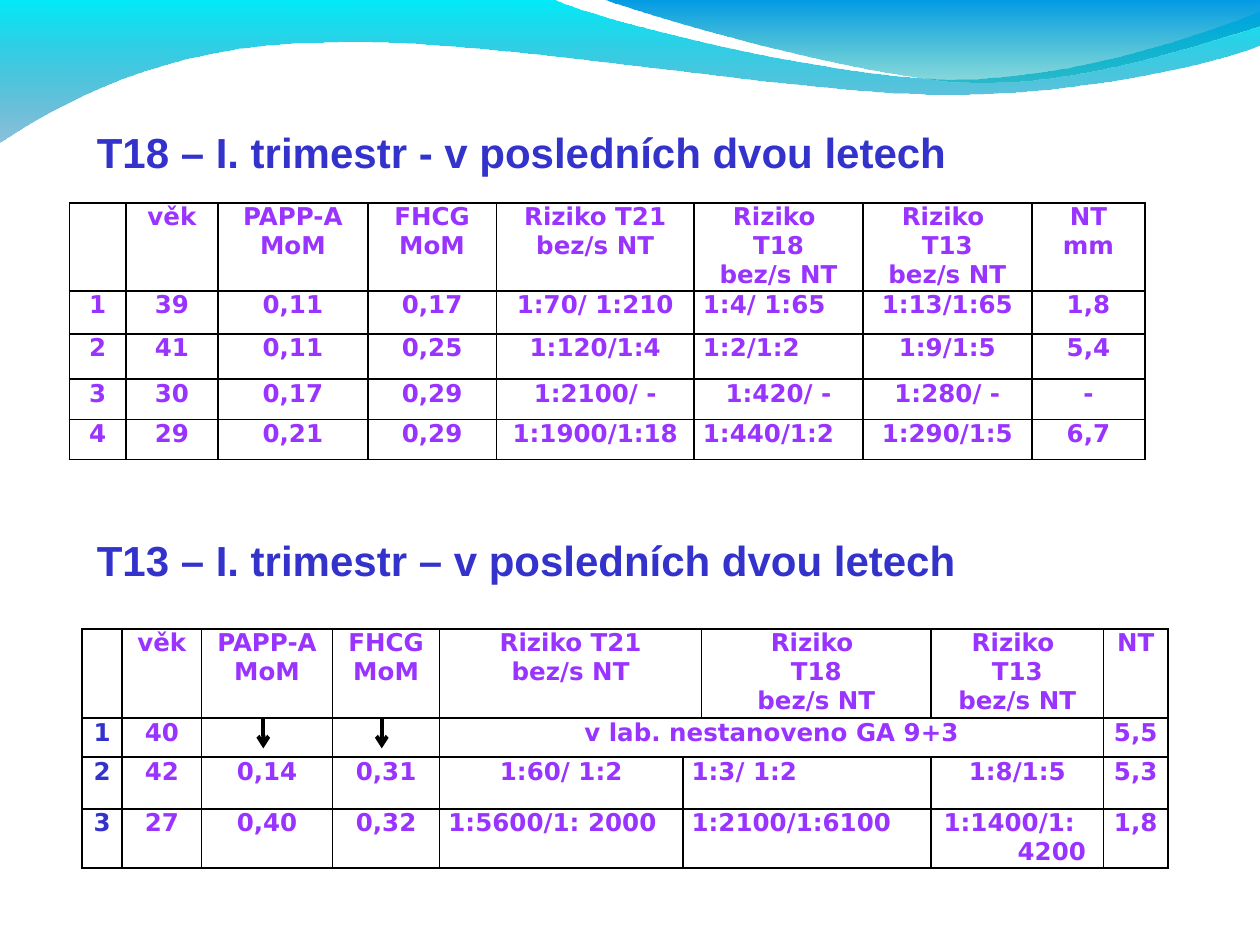
import pptx
import pptx.dml.color
import pptx.enum.shapes
import pptx.enum.text
import pptx.oxml.ns
import pptx.util
from lxml import etree

Inches = pptx.util.Inches
Pt = pptx.util.Pt
RGBColor = pptx.dml.color.RGBColor
ALIGN = pptx.enum.text.PP_ALIGN
qn = pptx.oxml.ns.qn

CYAN = RGBColor(0x00, 0xEB, 0xF8)
STEEL = RGBColor(0x00, 0x79, 0xAF)
BLUE = RGBColor(0x00, 0x9B, 0xE5)
TEAL = RGBColor(0x00, 0xAD, 0xB6)
INDIGO = RGBColor(0x33, 0x33, 0xCC)
VIOLET = RGBColor(0x99, 0x33, 0xFF)
BLACK = RGBColor(0, 0, 0)

# Waves: a start point, then line ends (one point) or curves (three points)
LARGE_WAVE = [
    [(0, 0)], [(4.4, 0)],
    [(4.76, 0.17), (6.64, 0.63), (7.58, 0.63)],
    [(8.53, 0.63), (9.58, 0.26), (10, 0.09)],
    [(10, 0.36)],
    [(9.83, 0.44), (8.7, 0.76), (7.46, 0.75)],
    [(6.22, 0.75), (3.82, 0.28), (2.57, 0.34)],
    [(1.29, 0.35), (0.46, 0.83), (0, 1.13)],
]
SMALL_WAVE = [
    [(4.79, 0)],
    [(5.09, 0.11), (6.82, 0.62), (7.69, 0.65)],
    [(8.56, 0.69), (9.61, 0.32), (10, 0.21)],
    [(10, 0)],
]

# Cell text: "|" parts paragraphs, a leading "<" or ">" aligns left or right
HEADINGS = ["", "věk", "PAPP-A|MoM", "FHCG|MoM", "Riziko T21|bez/s NT",
            "Riziko |T18|bez/s NT", "Riziko |T13|bez/s NT"]
T18_ROWS = [
    HEADINGS + ["NT|mm"],
    ["1", "39", "0,11", "0,17", "1:70/ 1:210", "<1:4/ 1:65", "1:13/1:65", "1,8"],
    ["2", "41", "0,11", "0,25", "1:120/1:4", "<1:2/1:2", "1:9/1:5", "5,4"],
    ["3", "30", "0,17", "0,29", "1:2100/ -", "1:420/ -", "1:280/ -", "-"],
    ["4", "29", "0,21", "0,29", "1:1900/1:18", "<1:440/1:2", "1:290/1:5", "6,7"],
]
T13_ROWS = [
    HEADINGS[:5] + [""] + HEADINGS[5:] + ["NT"],
    ["1", "40", "", "", "v lab. nestanoveno GA 9+3", "", "", "", "5,5"],
    ["2", "42", "0,14", "0,31", "1:60/ 1:2", "<1:3/ 1:2", "", "1:8/1:5", "5,3"],
    ["3", "27", "0,40", "0,32", "<1:5600/1: 2000", "<1:2100/1:6100", "",
     "<1:1400/1:|>4200", "1,8"],
]
T13_MERGES = [(0, 4, 5), (1, 4, 7), (2, 5, 6), (3, 5, 6)]  # row, first, last


def bend_edges(wave, segments):
    """Turn the straight edges that stand for curves into cubic curves."""
    edges = list(wave.element.iter(qn("a:lnTo")))
    for edge, segment in zip(edges, segments[1:]):
        if len(segment) == 1:
            continue
        curve = etree.Element(qn("a:cubicBezTo"))
        for x, y in segment:
            etree.SubElement(curve, qn("a:pt"), x=str(Inches(x) - wave.left),
                             y=str(Inches(y) - wave.top))
        edge.getparent().replace(edge, curve)


def add_wave(page, segments, top_color, bottom_color):
    ends = [tuple(Inches(value) for value in segment[-1]) for segment in segments]
    builder = page.shapes.build_freeform(*ends[0])
    builder.add_line_segments(ends[1:], close=True)
    wave = builder.convert_to_shape()
    bend_edges(wave, segments)
    wave.shadow.inherit = False
    wave.line.fill.background()
    wave.fill.gradient()
    wave.fill.gradient_angle = 270
    for stop, color, position in zip(wave.fill.gradient_stops,
                                     (top_color, bottom_color), (0, 1)):
        stop.color.rgb = color
        stop.position = position
    # The lower end of the gradient is see-through
    last_color = list(wave.element.iter(qn("a:srgbClr")))[-1]
    etree.SubElement(last_color, qn("a:alpha")).set("val", "45000")


def style_span(span, font, size, color):
    span.font.name = font
    span.font.size = Pt(size)
    span.font.bold = True
    span.font.color.rgb = color


def add_heading(page, left, top, width, height, text):
    box = page.shapes.add_textbox(Inches(left), Inches(top), Inches(width), Inches(height))
    box.text_frame.word_wrap = True
    para = box.text_frame.paragraphs[0]
    para.line_spacing = 0.8
    span = para.add_run()
    span.text = text
    style_span(span, "Arial", 24, INDIGO)


def add_borders(cell):
    properties = cell._tc.get_or_add_tcPr()
    for side in ("lnL", "lnR", "lnT", "lnB"):
        line = etree.SubElement(properties, qn("a:" + side), w=str(Pt(1)))
        fill = etree.SubElement(line, qn("a:solidFill"))
        etree.SubElement(fill, qn("a:srgbClr"), val=str(BLACK))


def fill_cell(cell, text, color):
    cell.margin_left = cell.margin_right = Inches(0.07)
    cell.margin_top = cell.margin_bottom = 0
    add_borders(cell)
    cell.fill.background()
    if not text:
        return
    for index, part in enumerate(text.split("|")):
        frame = cell.text_frame
        para = frame.add_paragraph() if index else frame.paragraphs[0]
        para.alignment = {"<": ALIGN.LEFT, ">": ALIGN.RIGHT}.get(part[0], ALIGN.CENTER)
        span = para.add_run()
        span.text = part.lstrip("<>")
        style_span(span, "DejaVu Sans", 14, color)


def add_risk_table(page, left, top, widths, heights, rows, number_color, merges=()):
    frame = page.shapes.add_table(len(heights), len(widths), Inches(left), Inches(top),
                                  Inches(sum(widths)), Inches(sum(heights)))
    table = frame.table
    table.first_row = table.horz_banding = False
    for column, width in zip(table.columns, widths):
        column.width = Inches(width)
    for row, height in zip(table.rows, heights):
        row.height = Inches(height)
    for row, first, last in merges:
        table.cell(row, first).merge(table.cell(row, last))
    for r, texts in enumerate(rows):
        for c, text in enumerate(texts):
            fill_cell(table.cell(r, c), text, VIOLET if c else number_color)
    return table


def add_down_arrow(page, x, top, bottom):
    arrow = page.shapes.add_connector(pptx.enum.shapes.MSO_CONNECTOR.STRAIGHT,
                                      Inches(x), Inches(top), Inches(x), Inches(bottom))
    arrow.line.color.rgb = BLACK
    arrow.line.width = Pt(2.25)
    etree.SubElement(arrow.line._get_or_add_ln(), qn("a:tailEnd"), type="arrow")
    etree.SubElement(arrow._element.spPr, qn("a:effectLst"))


def main():
    deck = pptx.Presentation()
    deck.slide_width, deck.slide_height = Inches(10), Inches(7.5)
    page = deck.slides.add_slide(deck.slide_layouts[6])

    # Waves along the top
    add_wave(page, LARGE_WAVE, CYAN, STEEL)
    add_wave(page, SMALL_WAVE, BLUE, TEAL)

    # T18 section
    add_risk_table(page, 0.55, 1.61, [0.45, 0.73, 1.19, 1.02, 1.57, 1.34, 1.34, 0.9],
                   [0.7, 0.34, 0.36, 0.32, 0.32], T18_ROWS, VIOLET)
    add_heading(page, 0.67, 1.03, 8.41, 0.42, "T18 – I. trimestr - v posledních dvou letech")

    # T13 section, with arrows for the lowered values
    table = add_risk_table(page, 0.65, 4.99,
                           [0.32, 0.63, 1.04, 0.85, 1.93, 0.15, 1.82, 1.37, 0.51],
                           [0.71, 0.31, 0.41, 0.47], T13_ROWS, INDIGO, T13_MERGES)
    split_risk = table.cell(3, 7)
    split_risk.margin_left, split_risk.margin_right = Inches(0.1), Inches(0.14)
    add_heading(page, 0.67, 4.27, 8.61, 0.42, "T13 – I. trimestr – v posledních dvou letech")
    for x in (3.03, 2.09):
        add_down_arrow(page, x, 5.7, 5.94)

    deck.save("out.pptx")


if __name__ == "__main__":
    main()
